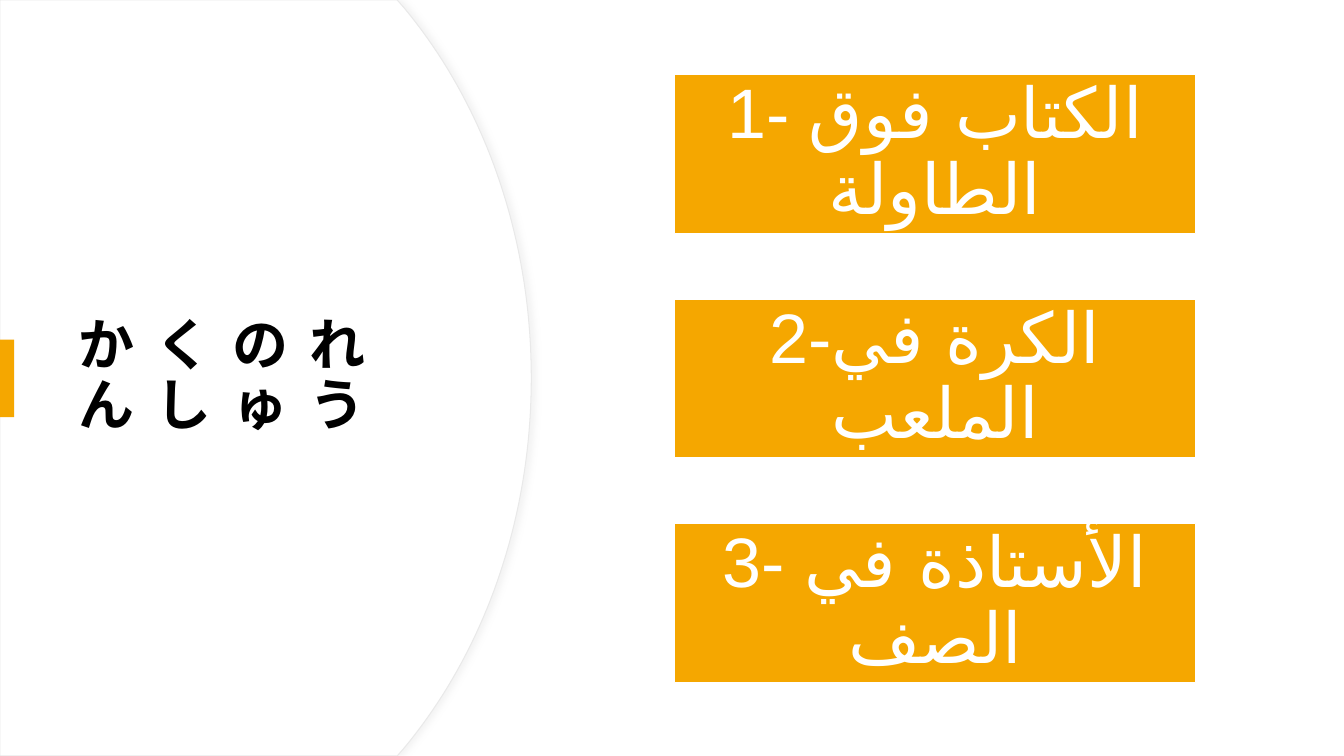
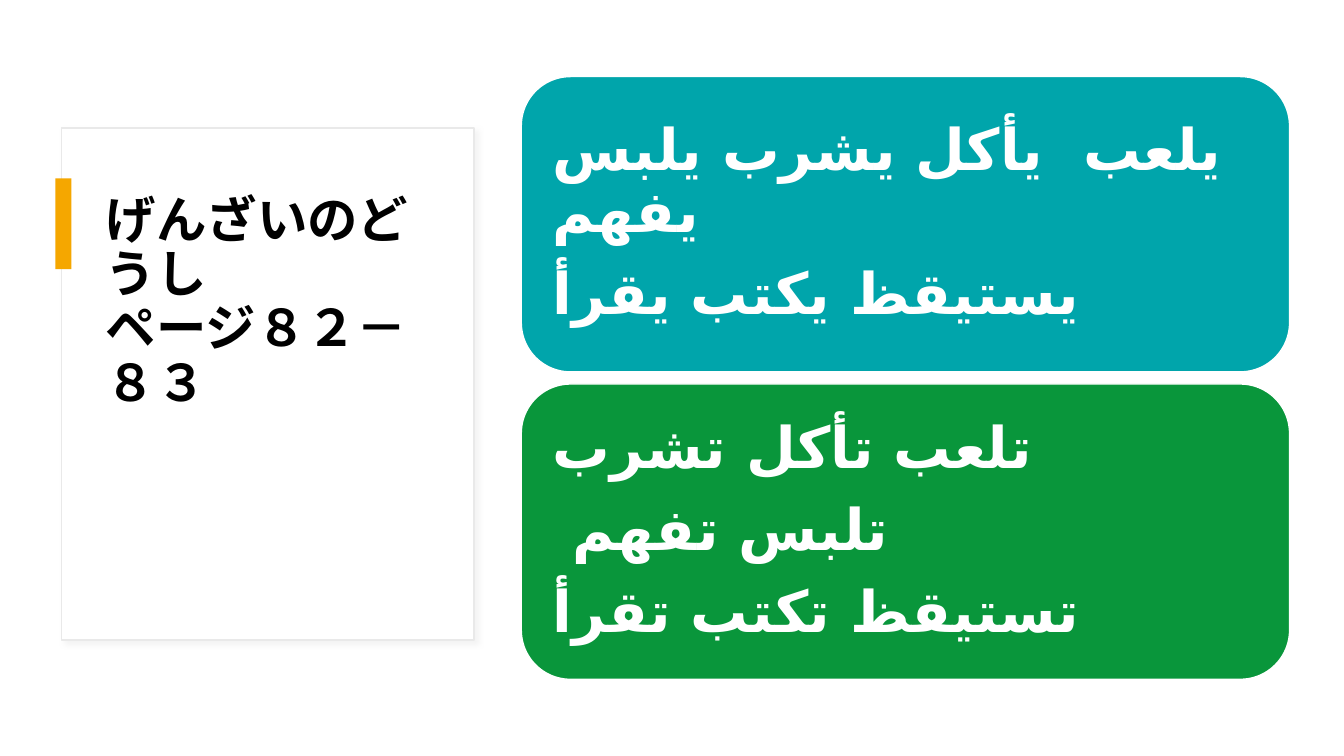
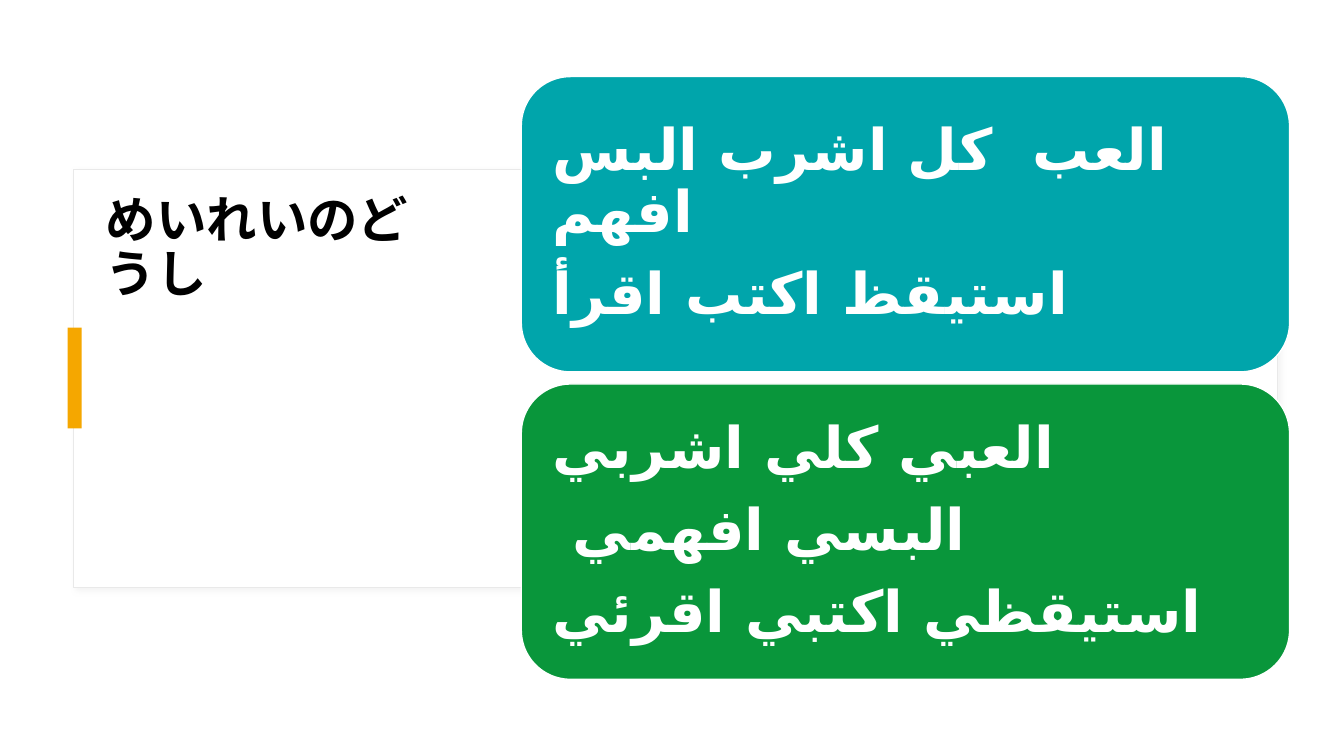
from dataclasses import dataclass

from pptx import Presentation
from pptx import util as u
from pptx.dml.color import RGBColor
from pptx.enum import shapes, text
from pptx.oxml import parse_xml
from pptx.oxml.ns import nsdecls, qn


@dataclass(frozen=True)
class Theme:
    """Colours, fonts and type sizes of the deck."""

    font: str = "Arial"
    arabic_font: str = "DejaVu Sans"
    ink: str = "000000"
    paper: str = "FFFFFF"
    edge: str = "E9E9E9"
    shade: str = "D9D9D9"
    amber: str = "F5A700"
    teal: str = "00A5AB"
    green: str = "09963B"
    hero_size: int = 40
    title_size: int = 36
    sentence_size: int = 50
    verb_size: int = 41
    line_spacing: float = 0.9
    space_after: float = 0.35


THEME = Theme()
RECT = shapes.MSO_SHAPE.RECTANGLE
ROUNDED = shapes.MSO_SHAPE.ROUNDED_RECTANGLE
MIDDLE, TOP = text.MSO_ANCHOR.MIDDLE, text.MSO_ANCHOR.TOP
LEFT, CENTER = text.PP_ALIGN.LEFT, text.PP_ALIGN.CENTER

CARD = (0.73, 1.68, 11.94, 4.15)
TITLE = (0.95, 1.88, 3.39, 3.85)
VERBS = (5.17, 0.76, 7.62, 5.98)


def inches(box):
    """Turn a box of numbers into lengths."""
    return [u.Inches(value) for value in box]


def assign(target, **values):
    """Set every named attribute on the target."""
    for name, value in values.items():
        setattr(target, name, value)


def paint(shape, fill, line=None, width=1):
    """Give a shape its fill and outline, without a shadow."""
    shape.shadow.inherit = False
    shape.fill.solid()
    shape.fill.fore_color.rgb = RGBColor.from_string(fill)
    if line:
        shape.line.color.rgb = RGBColor.from_string(line)
        shape.line.width = u.Pt(width)
    else:
        shape.line.fill.background()


def cast_shadow(shape, degrees):
    """Add a faint outer shadow in the given direction."""
    effects = shape.element.spPr.find(qn("a:effectLst"))
    effects.append(parse_xml(
        f'<a:outerShdw {nsdecls("a")} blurRad="{u.Pt(4)}" dist="{u.Pt(3)}" '
        f'dir="{degrees * 60000}" algn="tl" rotWithShape="0">'
        f'<a:srgbClr val="{THEME.shade}"><a:alpha val="30000"/></a:srgbClr>'
        "</a:outerShdw>"))


def add_block(page, box, fill, kind=RECT, line=None):
    """Place a filled preset shape."""
    shape = page.shapes.add_shape(kind, *inches(box))
    paint(shape, fill, line)
    return shape


def write(frame, lines, size, color, bold, align, anchor, after=0, tracking=0):
    """Write one paragraph per line in the deck's fonts."""
    assign(frame, word_wrap=True, vertical_anchor=anchor,
           auto_size=text.MSO_AUTO_SIZE.NONE)
    for index, line in enumerate(lines):
        para = frame.add_paragraph() if index else frame.paragraphs[0]
        assign(para, alignment=align, line_spacing=THEME.line_spacing,
               space_after=u.Pt(round(size * after, 1)))
        span = para.add_run()
        span.text = line
        assign(span.font, size=u.Pt(size), bold=bold, name=THEME.font)
        span.font.color.rgb = RGBColor.from_string(color)
        properties = span.font._element
        for script, face in (("ea", THEME.font), ("cs", THEME.arabic_font)):
            properties.append(parse_xml(
                f'<a:{script} {nsdecls("a")} typeface="{face}"/>'))
        if tracking:
            properties.set("spc", str(tracking * 100))


def add_title(page, box, lines, size=THEME.title_size, anchor=TOP, tracking=0):
    """Move the title to its box, in front of what is already there."""
    title = page.shapes.title
    assign(title, **dict(zip(("left", "top", "width", "height"), inches(box))))
    write(title.text_frame, lines, size, THEME.ink, True, LEFT, anchor,
          tracking=tracking)
    title.element.getparent().append(title.element)


def add_card(page, box):
    """Place a white card with a thin edge and a shadow."""
    cast_shadow(add_block(page, box, THEME.paper, line=THEME.edge), 45)


def add_disc(page, box):
    """Draw the white disc that runs off the left side."""
    left, top, width, height = box
    middle = top + height / 2
    right = left + width
    shoulder = right - 1.33
    controls = [(right - 1.26, top + 0.08), (right - 0.48, top + 1.02),
                (right, top + 2.32), (right, middle)]
    steps = 40
    upper = [(shoulder, top)]
    for step in range(steps + 1):
        t = step / steps
        weights = ((1 - t) ** 3, 3 * t * (1 - t) ** 2, 3 * t * t * (1 - t), t ** 3)
        upper.append(tuple(sum(w * point[axis] for w, point in zip(weights, controls))
                           for axis in (0, 1)))
    lower = [(x, 2 * middle - y) for x, y in reversed(upper[:-1])]
    outline = upper + lower + [(left, top + height)]
    builder = page.shapes.build_freeform(u.Inches(left), u.Inches(top))
    builder.add_line_segments([inches(point) for point in outline], close=True)
    disc = builder.convert_to_shape()
    paint(disc, THEME.paper, THEME.edge, 0.75)
    cast_shadow(disc, 0)


def add_stack(page, box, panels, gap, kind, inset, size, bold, align):
    """Share a box among equal panels of text, from top to bottom."""
    left, top, width, height = box
    each = (height - gap * (len(panels) - 1)) / len(panels)
    for index, (fill, lines) in enumerate(panels):
        place = (left, top + index * (each + gap), width, each)
        panel = add_block(page, place, fill, kind, THEME.paper)
        frame = panel.text_frame
        assign(frame, **{f"margin_{side}": u.Inches(inset)
                         for side in ("left", "top", "right", "bottom")})
        write(frame, lines, size, THEME.paper, bold, align, MIDDLE,
              after=THEME.space_after)


def sentence_slide(page, title, sentences):
    """Build the slide with a disc and a column of sentences."""
    add_disc(page, (0, 0, 5.27, 7.5))
    add_title(page, (0.68, 1.27, 3.94, 4.95), [title], THEME.hero_size, MIDDLE, 15)
    add_block(page, (0, 3.37, 0.14, 0.77), THEME.amber)
    add_stack(page, (6.69, 0.74, 5.17, 6.03),
              [(THEME.amber, [sentence]) for sentence in sentences],
              0.65, RECT, 0.03, THEME.sentence_size, False, CENTER)


def verb_slide(page, title, card, bar, masculine, feminine):
    """Build a slide with a title card and two panels of verbs."""
    add_card(page, card)
    add_block(page, bar, THEME.amber)
    add_title(page, TITLE, title)
    add_stack(page, VERBS, [(THEME.teal, masculine), (THEME.green, feminine)],
              0.12, ROUNDED, 0.17, THEME.verb_size, True, LEFT)


def main():
    """Build and save the deck."""
    deck = Presentation()
    assign(deck, slide_width=u.Inches(13.33), slide_height=u.Inches(7.5))
    pages = [deck.slides.add_slide(deck.slide_layouts[5]) for _ in range(3)]
    sentence_slide(pages[0], "かくのれんしゅう", [
        "1- الكتاب فوق الطاولة",
        "2-الكرة في الملعب",
        "3- الأستاذة في الصف",
    ])
    verb_slide(pages[1], ["げんざいのどうし", "ページ８２－８３"],
               (0.61, 1.27, 4.09, 5.08), (0.55, 1.77, 0.16, 0.9),
               ["يلعب  يأكل يشرب يلبس يفهم", "يستيقظ يكتب يقرأ"],
               ["تلعب تأكل تشرب", " تلبس تفهم", "تستيقظ تكتب تقرأ"])
    verb_slide(pages[2], ["めいれいのどうし"],
               CARD, (0.67, 3.25, 0.14, 1),
               ["العب  كل اشرب البس افهم", "استيقظ اكتب اقرأ"],
               ["العبي كلي اشربي", " البسي افهمي", "استيقظي اكتبي اقرئي"])
    deck.save("out.pptx")


if __name__ == "__main__":
    main()
